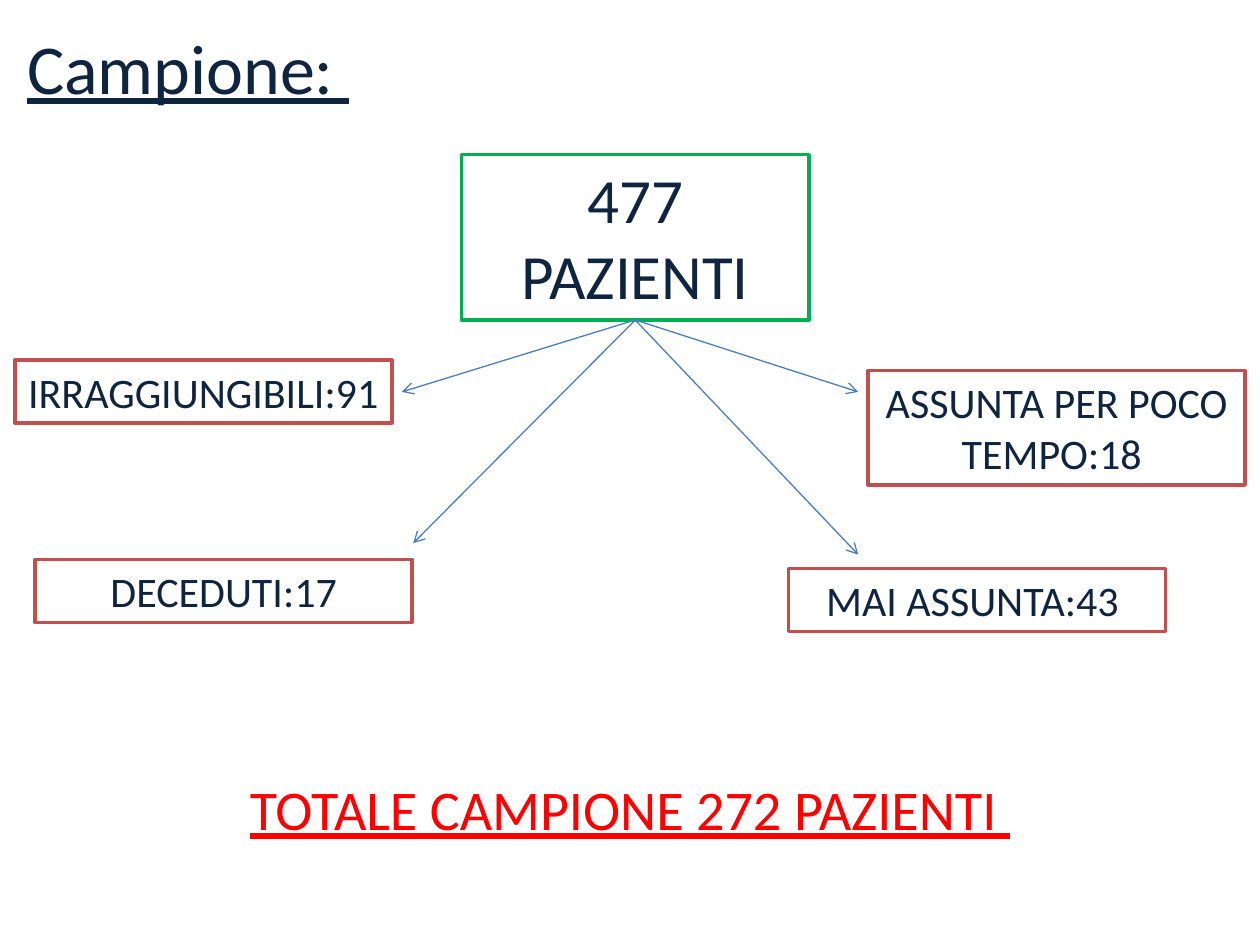
from lxml import etree
from pptx import Presentation
from pptx import util as u
from pptx.dml.color import RGBColor
from pptx.enum import shapes, text
from pptx.oxml.ns import qn

NAVY = RGBColor(0x0F, 0x24, 0x3E)
RED = RGBColor(0xFF, 0x00, 0x00)
GREEN = RGBColor(0x00, 0xB0, 0x50)
BRICK = RGBColor(0xC0, 0x50, 0x4D)
BLUE = RGBColor(0x4B, 0x7E, 0xBC)
WHITE = RGBColor(0xFF, 0xFF, 0xFF)

# Content: lengths in centimetres, boxes as left, top, width, height
TITLE = ("Campione: ", (0.3, 0.36, 7.8, 1.96))
SAMPLE = ("477 PAZIENTI", (9.3, 3.12, 7.01, 3.33))
TOTAL = ("TOTALE CAMPIONE 272 PAZIENTI ", (0.3, 15.49, 24.8, 1.63))
GROUP_WIDTH = 7.6
# Excluded groups: text, left, top, height, arrow tip
EXCLUDED = [
    ("IRRAGGIUNGIBILI:91", 0.3, 7.26, 1.27, (8.1, 7.9)),
    ("DECEDUTI:17", 0.71, 11.28, 1.27, (8.33, 10.95)),
    ("MAI ASSUNTA:43 ", 15.9, 11.46, 1.27, (17.3, 11.18)),
    ("ASSUNTA PER POCO TEMPO:18 ", 17.5, 7.47, 2.31, (17.3, 7.9)),
]


def add_text(slide, words, box, size, color=NAVY, outline=None,
             align=text.PP_ALIGN.CENTER, underline=False):
    """Add a text box, or an outlined rectangle when outline is given."""
    place = [u.Cm(length) for length in box]
    if outline is None:
        shape = slide.shapes.add_textbox(*place)
    else:
        shape = slide.shapes.add_shape(shapes.MSO_SHAPE.RECTANGLE, *place)
        shape.shadow.inherit = False
        shape.fill.solid()
        shape.fill.fore_color.rgb = WHITE
        shape.line.color.rgb = outline
        shape.line.width = u.Pt(2)
    frame = shape.text_frame
    frame.word_wrap = True
    frame.auto_size = text.MSO_AUTO_SIZE.SHAPE_TO_FIT_TEXT
    frame.vertical_anchor = text.MSO_ANCHOR.TOP
    paragraph = frame.paragraphs[0]
    paragraph.alignment = align
    run = paragraph.add_run()
    run.text = words
    run.font.name = "Calibri"
    run.font.size = u.Pt(size)
    run.font.color.rgb = color
    run.font.underline = underline
    return shape


def add_arrow(slide, source, tip):
    """Draw an arrow from the bottom middle of the source box to the tip."""
    start = (source.left + source.width // 2, source.top + source.height)
    arrow = slide.shapes.add_connector(
        shapes.MSO_CONNECTOR.STRAIGHT, *start, *[u.Cm(length) for length in tip])
    arrow.begin_connect(source, 2)
    arrow.line.color.rgb = BLUE
    arrow.line.width = u.Pt(0.75)
    etree.SubElement(arrow.line._get_or_add_ln(), qn("a:tailEnd"), type="arrow")
    etree.SubElement(arrow._element.spPr, qn("a:effectLst"))


def main():
    presentation = Presentation()
    presentation.slide_width = u.Cm(25.4)
    presentation.slide_height = u.Cm(19.05)
    slide = presentation.slides.add_slide(presentation.slide_layouts[6])

    # Title and whole sample
    add_text(slide, *TITLE, size=40, align=text.PP_ALIGN.LEFT, underline=True)
    sample = add_text(slide, *SAMPLE, size=36, outline=GREEN)

    # Excluded groups, each with its arrow
    for words, left, top, height, tip in EXCLUDED:
        add_arrow(slide, sample, tip)
        add_text(slide, words, (left, top, GROUP_WIDTH, height), size=24, outline=BRICK)

    # Final total
    add_text(slide, *TOTAL, size=32, color=RED, underline=True)

    presentation.save("out.pptx")


if __name__ == "__main__":
    main()
